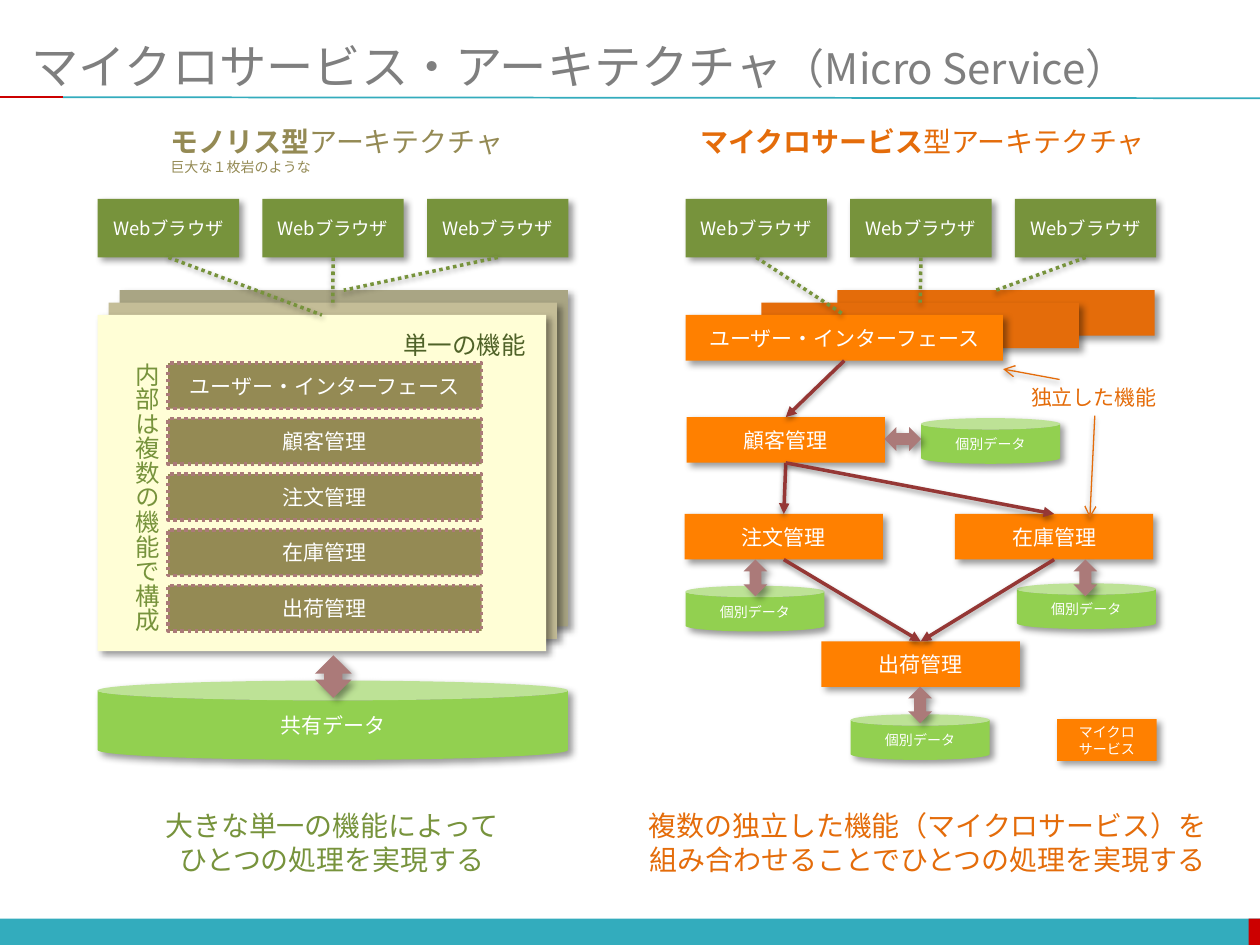
import pptx
import pptx.util
from pptx.dml.color import RGBColor
from pptx.enum.dml import MSO_LINE
from pptx.enum.shapes import MSO_CONNECTOR, MSO_SHAPE
from pptx.enum.text import MSO_ANCHOR, PP_ALIGN
from pptx.oxml.ns import qn
from lxml import etree

Cm, Pt = pptx.util.Cm, pptx.util.Pt
FONT = "Noto Sans CJK JP"
WHITE, GREEN, ORANGE, DARK_ORANGE = "FFFFFF", "77933C", "FF8000", "E46C0A"
OLIVE, MAUVE, LIME, TEAL, RED = "948A54", "AB7A79", "92D050", "33ACBD", "CC0000"
BOX_H = 0.92
BROWSER_TOP, BROWSER_W, BROWSER_H, BROWSER_PITCH = 4.01, 2.85, 1.18, 3.32

UI = "ユーザー・インターフェース"
MODULES = [UI, "顧客管理", "注文管理", "在庫管理", "出荷管理"]
SYSTEMS = [
    dict(left=1.97, size=(9.04, 6.78), shift=0.22,
         fills=["A9A584", "C4BD97", "FFFED6"], text=""),
    dict(left=13.82, size=(6.4, BOX_H), shift=1.53,
         fills=[DARK_ORANGE, DARK_ORANGE, ORANGE], text=UI),
]
SERVICE_W = 4
SERVICES = {
    "顧客管理": (13.84, 8.41),
    "注文管理": (13.8, 10.36),
    "在庫管理": (19.25, 10.36),
    "出荷管理": (16.56, 12.93),
}
CALLS = [(UI, "顧客管理"), ("顧客管理", "注文管理"), ("顧客管理", "在庫管理"),
         ("注文管理", "出荷管理"), ("在庫管理", "出荷管理")]
STORES = [(17.15, 14.4), (18.57, 8.43), (20.5, 11.76), (13.82, 11.81)]
SYNCS = [(14.99, 11.28, 0), (18.31, 13.84, 0), (21.64, 11.28, 0), (17.96, 8.48, 270)]
LABELS = [
    ((3.12, 2.39, 7.34, 0.94), [[("モノリス型", True), ("アーキテクチャ", False)]], 16, OLIVE),
    ((13.79, 2.39, 9.63, 0.94), [[("マイクロサービス", True), ("型アーキテクチャ", False)]], 16, DARK_ORANGE),
    ((3.18, 3.07, 3.35, 0.61), [[("巨大な１枚岩のような", False)]], 8, OLIVE),
    ((12.75, 16.18, 11.91, 1.63), [[("複数の独立した機能（マイクロサービス）を", False)],
                                   [("組み合わせることでひとつの処理を実現する", False)]], 16, DARK_ORANGE),
    ((3.02, 16.18, 7.34, 1.63), [[("大きな単一の機能によって", False)],
                                 [("ひとつの処理を実現する", False)]], 16, GREEN),
    ((7.87, 6.53, 3, 0.86), [[("単一の機能", False)]], 14, "4F6228"),
    ((20.52, 7.62, 3.07, 0.76), [[("独立した機能", False)]], 12, DARK_ORANGE),
]
POINTERS = [((22.07, 8.38), (21.97, 10.44)), ((21.36, 7.65), (20.22, 7.44))]


def rgb(color):
    return RGBColor.from_string(color)


def style(r, size, color, bold=False):
    r.font.size, r.font.bold, r.font.name = Pt(size), bold, FONT
    r.font.color.rgb = rgb(color)
    etree.SubElement(r.font._element, qn("a:ea"), typeface=FONT)


def add_shadow(effects, alpha, blur, dist, angle):
    shadow = etree.SubElement(effects, qn("a:outerShdw"), blurRad=str(Pt(blur)), dist=str(Pt(dist)),
                              dir=str(angle * 60000), algn="tl", rotWithShape="0")
    black = etree.SubElement(shadow, qn("a:srgbClr"), val="000000")
    etree.SubElement(black, qn("a:alpha"), val=str(alpha * 1000))


def add_box(s, box, fill, text="", size=12, kind=MSO_SHAPE.RECTANGLE, shadow=True):
    sp = s.shapes.add_shape(kind, *map(Cm, box))
    sp.fill.solid()
    sp.fill.fore_color.rgb = rgb(fill)
    sp.line.fill.background()
    sp.shadow.inherit = False
    if shadow:
        add_shadow(sp._element.spPr.find(qn("a:effectLst")), 40, 4, 3, 45)
    if text:
        tf = sp.text_frame
        tf.text, tf.word_wrap, tf.vertical_anchor = text, True, MSO_ANCHOR.MIDDLE
        tf.paragraphs[0].alignment = PP_ALIGN.CENTER
        style(tf.paragraphs[0].runs[0], size, WHITE)
    return sp


def add_sync(s, box, rotation=0):
    sp = add_box(s, box, MAUVE, kind=MSO_SHAPE.UP_DOWN_ARROW)
    sp.adjustments[0], sp.adjustments[1] = 0.546, 0.5
    sp.rotation = rotation


def add_line(s, start, end, color, width, dash=None, tail=None, shadow=True):
    c = s.shapes.add_connector(MSO_CONNECTOR.STRAIGHT, *map(Cm, start + end))
    c.line.color.rgb, c.line.width = rgb(color), Pt(width)
    if dash:
        c.line.dash_style = dash
    if tail:
        etree.SubElement(c.line._get_or_add_ln(), qn("a:tailEnd"), type=tail)
    effects = etree.SubElement(c._element.spPr, qn("a:effectLst"))
    if shadow:
        add_shadow(effects, 38, 3.1, 1.6, 90)


def add_label(s, box, lines, size, color, align=PP_ALIGN.CENTER):
    tf = s.shapes.add_textbox(*map(Cm, box)).text_frame
    tf.word_wrap = False
    for i, pieces in enumerate(lines):
        p = tf.add_paragraph() if i else tf.paragraphs[0]
        p.alignment = align
        for text, bold in pieces:
            r = p.add_run()
            r.text = text
            style(r, size, color, bold)
    return tf


def add_system(s, left, size, shift, fills, text):
    w, h = size
    tops = []
    for i, fill in enumerate(fills):
        depth = len(fills) - 1 - i
        x, y = left + depth * shift, 6.35 - depth * 0.25
        add_box(s, (x, y, w, h), fill, "" if depth else text)
        tops.insert(0, (x + w / 2, y))
    for i, top in enumerate(tops):
        x = left + i * BROWSER_PITCH
        add_box(s, (x, BROWSER_TOP, BROWSER_W, BROWSER_H), GREEN, "Webブラウザ", 10.5)
        add_line(s, (x + BROWSER_W / 2, BROWSER_TOP + BROWSER_H), top, GREEN, 2, MSO_LINE.ROUND_DOT)
    return tops[0]


def main():
    prs = pptx.Presentation()
    prs.slide_width, prs.slide_height = Cm(25.4), Cm(19.05)
    s = prs.slides.add_slide(prs.slide_layouts[6])

    add_box(s, (0, 18.52, 25.4, 0.55), TEAL, shadow=False)
    add_box(s, (25.17, 18.52, 0.23, 0.55), RED, shadow=False)
    add_line(s, (1.27, 1.96), (25.4, 1.98), TEAL, 1, shadow=False)
    add_line(s, (0, 1.96), (1.27, 1.96), RED, 1, shadow=False)
    title = add_label(s, (0.63, 0.74, 24.13, 1.17),
                      [[("マイクロサービス・アーキテクチャ", False), ("（Micro Service）", False)]],
                      27, "7F7F7F", PP_ALIGN.LEFT)
    title.word_wrap, title.vertical_anchor = True, MSO_ANCHOR.MIDDLE
    title.margin_left = title.margin_right = 0
    title.paragraphs[0].runs[1].font.size = Pt(24)

    _, (ui_x, ui_y) = [add_system(s, **system) for system in SYSTEMS]

    for i, name in enumerate(MODULES):
        sp = add_box(s, (3.39, 7.32 + i * 1.12, 6.32, BOX_H), OLIVE, name, shadow=False)
        sp.line.color.rgb, sp.line.width = rgb(MAUVE), Pt(2)
        sp.line.dash_style = MSO_LINE.ROUND_DOT
    add_box(s, (1.97, 13.72, 9.48, 1.6), LIME, "共有データ", kind=MSO_SHAPE.CAN)
    add_sync(s, (6.35, 13.21, 0.74, 0.86))

    tops = {UI: (ui_x, ui_y)}
    for name, (x, y) in SERVICES.items():
        add_box(s, (x, y, SERVICE_W, BOX_H), ORANGE, name)
        tops[name] = (x + SERVICE_W / 2, y)
    for x, y in STORES:
        add_box(s, (x, y, 2.8, BOX_H), LIME, "個別データ", 8, MSO_SHAPE.CAN)
    for caller, callee in CALLS:
        x, y = tops[caller]
        add_line(s, (x, y + BOX_H), tops[callee], "953735", 2, tail="triangle")
    for x, y, rotation in SYNCS:
        add_sync(s, (x, y, 0.48, 0.74), rotation)

    legend = add_box(s, (21.31, 14.5, 2.01, 0.84), ORANGE, "マイクロサービス", 8).text_frame
    legend.margin_left = legend.margin_right = Cm(0.4)
    for label in LABELS:
        add_label(s, *label)
    for start, end in POINTERS:
        add_line(s, start, end, DARK_ORANGE, 0.75, tail="arrow")
    side = add_label(s, (2.26, 7.06, 1.12, 5.74), [[("内部は複数の機能で構成", False)]], 14, GREEN)
    side._txBody.bodyPr.set("vert", "eaVert")
    prs.save("out.pptx")


if __name__ == "__main__":
    main()
